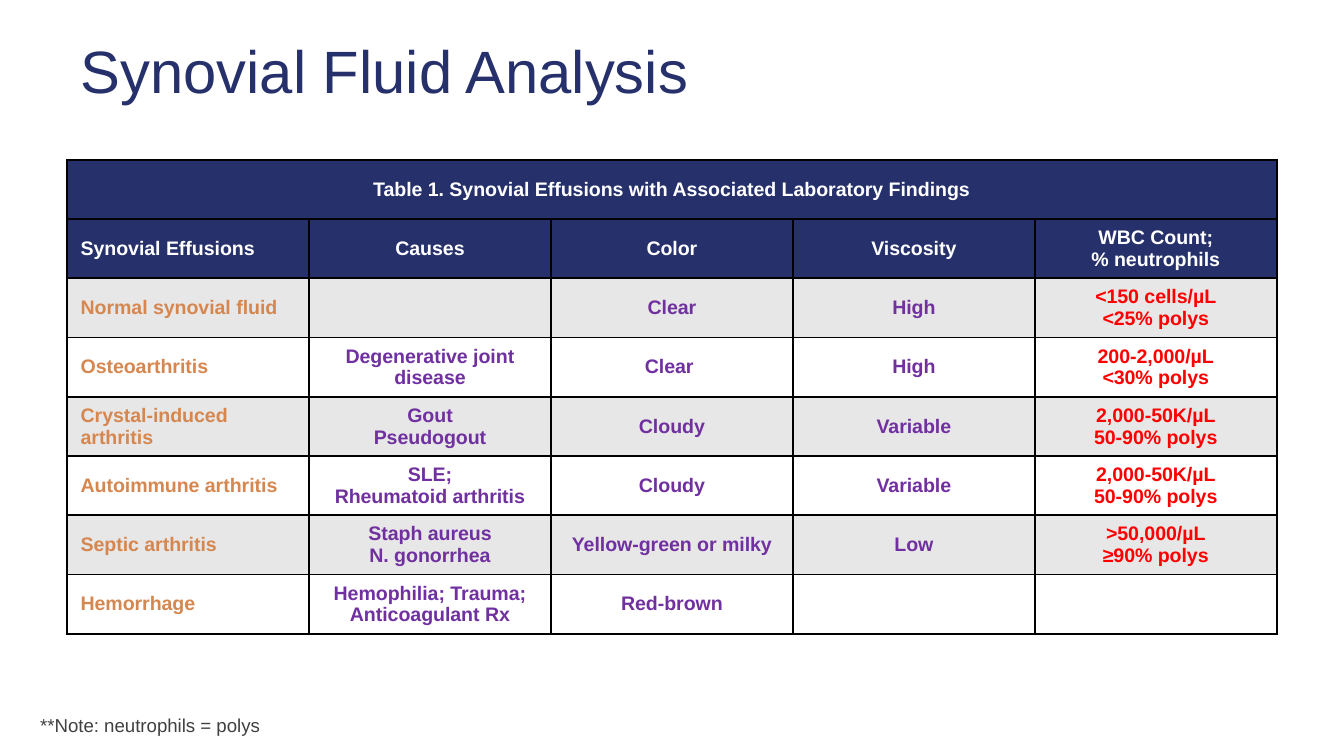
from dataclasses import dataclass

from lxml import etree
from pptx import Presentation
from pptx.dml.color import RGBColor
from pptx.enum import text as t
from pptx.oxml import ns
from pptx.util import Cm, Pt


@dataclass(frozen=True)
class Theme:
    """Colours, type sizes and font of the slide."""
    navy: str = "26306B"
    white: str = "FFFFFF"
    band: str = "E7E7E7"
    orange: str = "D6874F"
    purple: str = "7030A0"
    red: str = "FF0000"
    grey: str = "404040"
    line: str = "000000"
    font: str = "Arial"
    head: float = 32
    cell: float = 10.5
    note: float = 10


LOOK = Theme()
TITLE = "Synovial Fluid Analysis"
CAPTION = "Table 1. Synovial Effusions with Associated Laboratory Findings"
NOTE = "**Note: neutrophils = polys"
HEADS = ["Synovial Effusions", "Causes", "Color", "Viscosity",
         "WBC Count;\n% neutrophils"]
ROWS = [
    ["Normal synovial fluid", "", "Clear", "High",
     "<150 cells/µL\n<25% polys"],
    ["Osteoarthritis", "Degenerative joint disease", "Clear ", "High",
     "200-2,000/µL\n<30% polys"],
    ["Crystal-induced arthritis", "Gout\nPseudogout", "Cloudy", "Variable",
     "2,000-50K/µL\n50-90% polys"],
    ["Autoimmune arthritis", "SLE;\nRheumatoid arthritis", "Cloudy",
     "Variable", "2,000-50K/µL\n50-90% polys"],
    ["Septic arthritis", "Staph aureus\nN. gonorrhea",
     "Yellow-green or milky", "Low", ">50,000/µL\n≥90% polys"],
    ["Hemorrhage", "Hemophilia; Trauma; Anticoagulant Rx", "Red-brown",
     "", ""],
]


def write(frame, words, size, color, bold=False, align=t.PP_ALIGN.LEFT):
    """Fill a text frame with one paragraph per line of words."""
    for i, line in enumerate(words.split("\n")):
        para = frame.add_paragraph() if i else frame.paragraphs[0]
        para.alignment = align
        if line:
            run = para.add_run()
            run.text = line
            font = run.font
            font.name, font.size, font.bold = LOOK.font, Pt(size), bold
            font.color.rgb = RGBColor.from_string(color)


def border(cell):
    """Draw a thin line on all four sides of a cell."""
    props = cell._tc.get_or_add_tcPr()
    for i, side in enumerate(("a:lnL", "a:lnR", "a:lnT", "a:lnB")):
        edge = etree.Element(ns.qn(side), w=str(Pt(1)))
        fill = etree.SubElement(edge, ns.qn("a:solidFill"))
        etree.SubElement(fill, ns.qn("a:srgbClr"), val=LOOK.line)
        props.insert(i, edge)


def style(cell, words, fill, color, align):
    """Write, fill and frame one table cell."""
    cell.vertical_anchor = t.MSO_ANCHOR.MIDDLE
    cell.fill.solid()
    cell.fill.fore_color.rgb = RGBColor.from_string(fill)
    border(cell)
    write(cell.text_frame, words, LOOK.cell, color, True, align)


def add_title(slide, box):
    """Place the title in its box."""
    shape = slide.shapes.title
    shape.left, shape.top, shape.width, shape.height = box
    shape.text_frame.vertical_anchor = t.MSO_ANCHOR.MIDDLE
    write(shape.text_frame, TITLE, LOOK.head, LOOK.navy)


def add_grid(slide, box):
    """Place the table of effusions in its box."""
    lines = [[CAPTION] + [""] * (len(HEADS) - 1), HEADS, *ROWS]
    grid = slide.shapes.add_table(len(lines), len(HEADS), *box).table
    inks = [LOOK.orange] + [LOOK.purple] * 3 + [LOOK.red]
    for r, line in enumerate(lines):
        top = r < 2
        fill = LOOK.navy if top else (LOOK.band, LOOK.white)[r % 2]
        for c, words in enumerate(line):
            left = c == 0 and r > 0
            align = t.PP_ALIGN.LEFT if left else t.PP_ALIGN.CENTER
            color = LOOK.white if top else inks[c]
            style(grid.cell(r, c), words, fill, color, align)
    grid.cell(0, 0).merge(grid.cell(0, len(HEADS) - 1))


def add_note(slide, box):
    """Place the footnote in its box."""
    frame = slide.shapes.add_textbox(*box).text_frame
    frame.word_wrap = False
    frame.auto_size = t.MSO_AUTO_SIZE.SHAPE_TO_FIT_TEXT
    frame.vertical_anchor = t.MSO_ANCHOR.BOTTOM
    write(frame, NOTE, LOOK.note, LOOK.grey)


def main():
    """Build the slide and save it."""
    deck = Presentation()
    deck.slide_width, deck.slide_height = Cm(25.4), Cm(14.29)
    slide = deck.slides.add_slide(deck.slide_layouts[5])
    add_title(slide, (Cm(1.27), Cm(0.13), Cm(22.86), Cm(2.39)))
    add_grid(slide, (Cm(1.27), Cm(3.02), Cm(22.86), Cm(8.96)))
    add_note(slide, (Cm(0.51), Cm(13.36), Cm(4.8), Cm(0.68)))
    deck.save("out.pptx")


if __name__ == "__main__":
    main()
